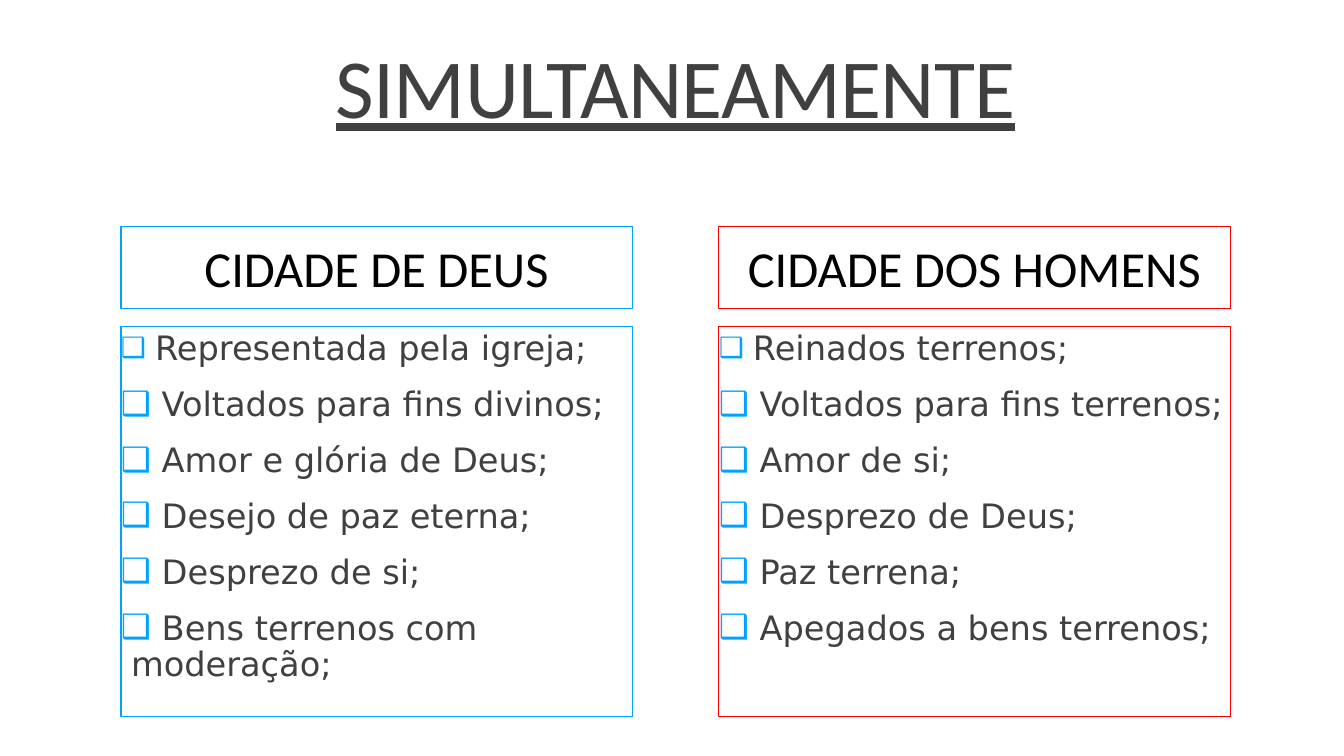
from lxml import etree
from pptx import Presentation
from pptx.dml.color import RGBColor
from pptx.enum.text import MSO_ANCHOR, MSO_AUTO_SIZE, PP_ALIGN
from pptx.oxml.ns import qn
from pptx.util import Inches, Pt

CENTER, LEFT = PP_ALIGN.CENTER, PP_ALIGN.LEFT
MIDDLE, TOP = MSO_ANCHOR.MIDDLE, MSO_ANCHOR.TOP
NO_AUTOFIT = MSO_AUTO_SIZE.NONE

COLORS = {"blue": "00A2FF", "red": "FF0000", "black": "000000", "gray": "404040"}
HEADING_FONT, LIST_FONT = "Calibri", "DejaVu Sans"
COMPARISON_LAYOUT = 4
COLUMN_LEFT, COLUMN_STEP, COLUMN_WIDTH = 1.2, 5.93, 5.07

COLUMNS = [
    ("CIDADE DE DEUS", "blue", [
        "Representada pela igreja;",
        "Voltados para fins divinos;",
        "Amor e glória de Deus;",
        "Desejo de paz eterna;",
        "Desprezo de si;",
        "Bens terrenos com moderação;",
    ]),
    ("CIDADE DOS HOMENS", "red", [
        "Reinados terrenos;",
        "Voltados para fins terrenos;",
        "Amor de si;",
        "Desprezo de Deus;",
        "Paz terrena;",
        "Apegados a bens terrenos;",
    ]),
]


def color(name):
    return RGBColor.from_string(COLORS[name])


def place(shape, left, top, width, height, anchor=MIDDLE, side_inset=0.1, line=None):
    """Position a placeholder and set its frame and text area."""
    shape.left, shape.top = Inches(left), Inches(top)
    shape.width, shape.height = Inches(width), Inches(height)
    frame = shape.text_frame
    frame.word_wrap = True
    frame.auto_size = NO_AUTOFIT
    frame.vertical_anchor = anchor
    frame.margin_left = frame.margin_right = Inches(side_inset)
    frame.margin_top = frame.margin_bottom = Inches(0.05)
    if line:
        shape.line.color.rgb = color(line)
        shape.line.width = Pt(0.75)


def add_text(paragraph, text, size, font=LIST_FONT, fill="gray", underline=False):
    run = paragraph.add_run()
    run.text = text
    run.font.size = Pt(size)
    run.font.name = font
    run.font.bold = False
    run.font.underline = underline
    run.font.color.rgb = color(fill)
    return run


def format_paragraph(paragraph, align=LEFT, line_spacing=1.0, before=12, after=2):
    paragraph.alignment = align
    paragraph.line_spacing = line_spacing
    paragraph.space_before = Pt(before)
    paragraph.space_after = Pt(after)


def add_bullet(paragraph):
    properties = paragraph._p.get_or_add_pPr()
    properties.set("marL", str(Inches(0.1)))
    properties.set("indent", str(Inches(-0.1)))
    bullet_color = etree.SubElement(properties, qn("a:buClr"))
    etree.SubElement(bullet_color, qn("a:srgbClr"), val=COLORS["blue"])
    etree.SubElement(properties, qn("a:buFont"), typeface=LIST_FONT)
    etree.SubElement(properties, qn("a:buChar"), char="❑")


def fill_title(shape, text):
    place(shape, COLUMN_LEFT, 0.16, 11, 1.5, side_inset=0)
    paragraph = shape.text_frame.paragraphs[0]
    format_paragraph(paragraph, CENTER, line_spacing=0.9, before=0, after=0)
    run = add_text(paragraph, text, 60, HEADING_FONT, underline=True)
    run.font._element.set("spc", "-50")


def fill_heading(shape, left, text, line):
    place(shape, left, 2.25, COLUMN_WIDTH, 0.81, line=line)
    paragraph = shape.text_frame.paragraphs[0]
    format_paragraph(paragraph, CENTER)
    add_text(paragraph, text, 36, HEADING_FONT, "black")


def fill_list(shape, left, items, line):
    place(shape, left, 3.24, COLUMN_WIDTH, 3.87, TOP, side_inset=0, line=line)
    frame = shape.text_frame
    for index, item in enumerate(items):
        paragraph = frame.add_paragraph() if index else frame.paragraphs[0]
        format_paragraph(paragraph, line_spacing=0.9)
        add_bullet(paragraph)
        # The bullet takes its size from the leading space
        add_text(paragraph, " ", 24 if index else 20)
        add_text(paragraph, item, 24)


def main():
    presentation = Presentation()
    presentation.slide_width = Inches(13.33)
    presentation.slide_height = Inches(7.5)
    layout = presentation.slide_layouts[COMPARISON_LAYOUT]
    slide = presentation.slides.add_slide(layout)
    title, *bodies = slide.placeholders
    fill_title(title, "SIMULTANEAMENTE")
    for index, (heading, line, items) in enumerate(COLUMNS):
        left = COLUMN_LEFT + index * COLUMN_STEP
        fill_heading(bodies[2 * index], left, heading, line)
        fill_list(bodies[2 * index + 1], left, items, line)
    presentation.save("out.pptx")


if __name__ == "__main__":
    main()
